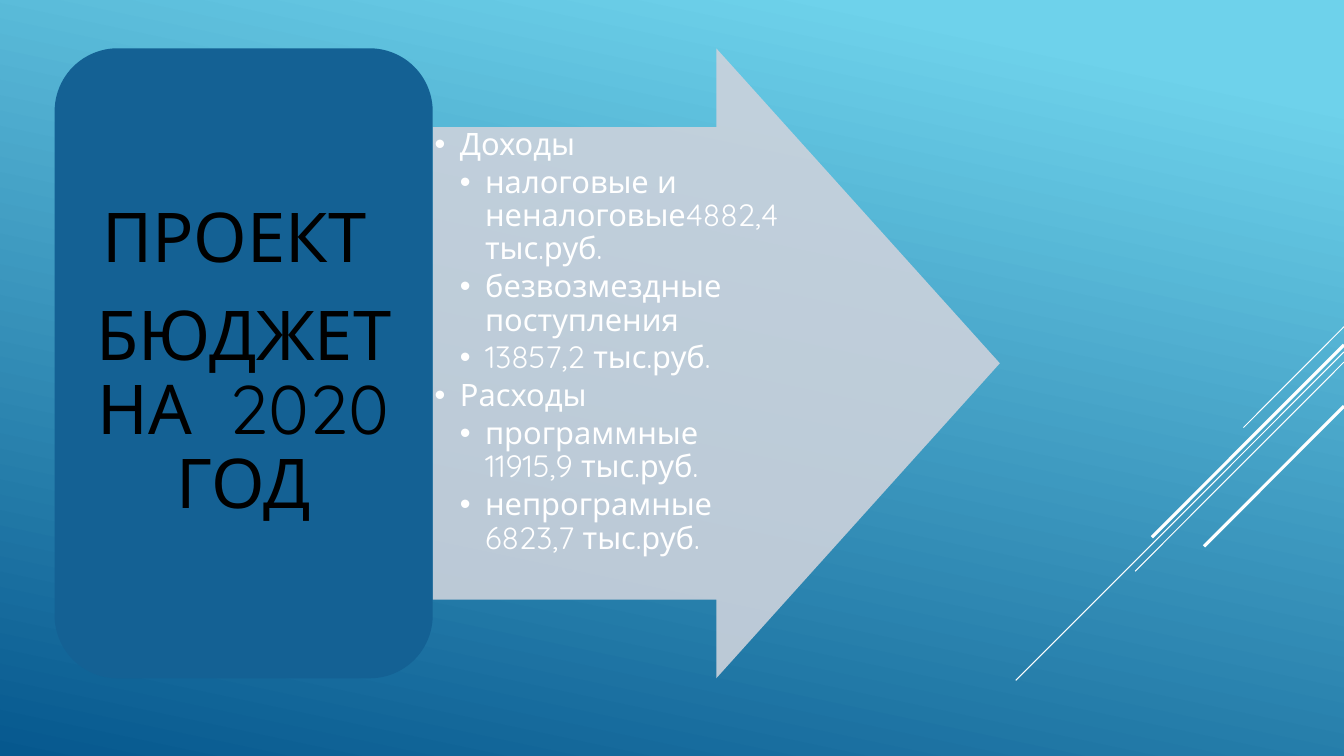
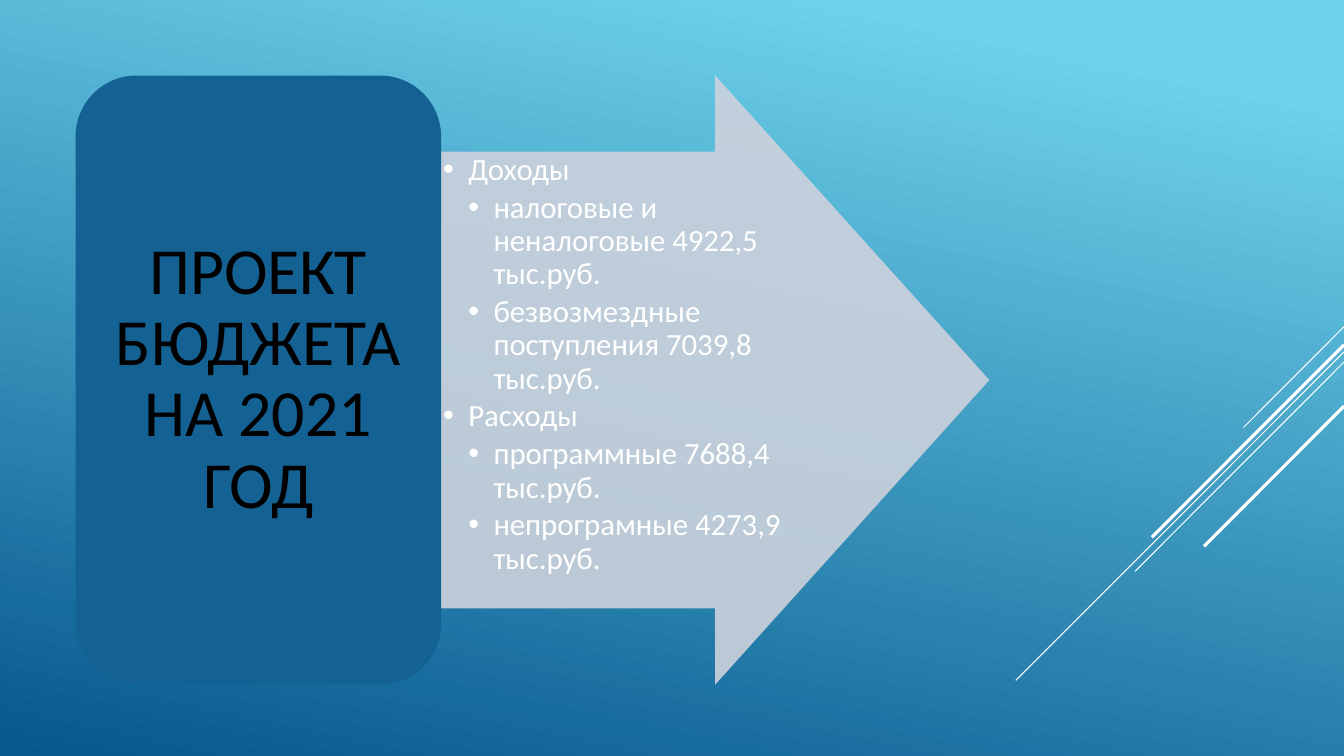
from lxml.etree import SubElement
from pptx import Presentation
from pptx.dml.color import RGBColor
from pptx.enum.shapes import MSO_CONNECTOR, MSO_SHAPE
from pptx.enum.text import MSO_ANCHOR, PP_ALIGN
from pptx.oxml.ns import qn
from pptx.util import Inches, Pt

COLORS = {
    "sky": "6ED2EB",
    "deep": "06588E",
    "panel": "146194",
    "arrow": "CCD2DC",
    "white": "FFFFFF",
    "black": "000000",
}
COLS, ROWS = 160, 90
SLIDE_W, SLIDE_H = Inches(13.33), Inches(7.5)
CELL = SLIDE_H / ROWS
PANEL_SHARE, ARROW_SHARE = 0.6, 0.9
SHAFT_SHARE, LIST_SHARE = 0.75, 0.625
BULLET_SIZE = 22
INDENT = Inches(0.25)
DIAGONALS = [
    (38.9, 12, 0.75),
    (41.9, 39.1, 0.75),
    (43.1, 24.9, 0.75),
    (41.05, 22.9, 2.25),
    (48.35, 16.7, 2.25),
]
BUDGETS = [
    {
        "left": 6.5, "top": 5.75, "height": 75,
        "font": "Quicksand", "title_size": 49,
        "title": ["ПРОЕКТ ", "БЮДЖЕТ НА  2020 ГОД"],
        "items": [
            ("Доходы", ["налоговые и неналоговые4882,4 тыс.руб.",
                        "безвозмездные поступления",
                        "13857,2 тыс.руб."]),
            ("Расходы", ["программные 11915,9 тыс.руб.",
                         "непрограмные 6823,7 тыс.руб."]),
        ],
    },
    {
        "left": 9, "top": 9, "height": 72.5,
        "font": "Calibri", "title_size": 47,
        "title": ["ПРОЕКТ БЮДЖЕТА НА 2021 ГОД"],
        "items": [
            ("Доходы", ["налоговые и неналоговые 4922,5 тыс.руб.",
                        "безвозмездные поступления 7039,8 тыс.руб."]),
            ("Расходы", ["программные 7688,4 тыс.руб.",
                         "непрограмные 4273,9 тыс.руб."]),
        ],
    },
]


def cells(n):
    return round(n * CELL)


def rgb(name):
    return RGBColor.from_string(COLORS[name])


def paint_background(s):
    fill = s.background.fill
    fill.gradient()
    fill.gradient_angle = 360 - 102
    for stop, position, color in zip(fill.gradient_stops, (0.1, 1), ("sky", "deep")):
        stop.position = position
        stop.color.rgb = rgb(color)


def add_diagonals(s):
    for row, span, width in DIAGONALS:
        line = s.shapes.add_connector(
            MSO_CONNECTOR.STRAIGHT, SLIDE_W, cells(row),
            cells(COLS - span), cells(row + span))
        line.line.color.rgb = rgb("white")
        line.line.width = Pt(width)
        SubElement(line._element.spPr, qn("a:effectLst"))


def add_block(s, kind, left, top, width, height, color):
    sp = s.shapes.add_shape(kind, cells(left), cells(top), cells(width), cells(height))
    sp.shadow.inherit = False
    sp.fill.solid()
    sp.fill.fore_color.rgb = rgb(color)
    sp.line.fill.background()
    return sp


def set_frame(tf, anchor, side, end):
    tf.word_wrap = True
    tf.vertical_anchor = anchor
    tf.margin_left = tf.margin_right = Inches(side)
    tf.margin_top = tf.margin_bottom = Inches(end)


def write_paragraphs(tf, lines, font, size, color, align, gap):
    tf.text = "\n".join(lines)
    for p in tf.paragraphs:
        p.alignment = align
        p.line_spacing = 0.9
        p.space_after = Pt(round(size * gap, 1))
        for r in p.runs:
            r.font.name = font
            r.font.size = Pt(size)
            r.font.color.rgb = rgb(color)


def add_bullet(p, level):
    p.level = level
    pPr = p._p.get_or_add_pPr()
    pPr.set("marL", str(INDENT * (level + 1)))
    pPr.set("indent", str(-INDENT))
    SubElement(pPr, qn("a:buFont"), typeface="Arial")
    SubElement(pPr, qn("a:buChar"), char="•")


def add_arrow(s, left, top, width, height):
    sp = add_block(s, MSO_SHAPE.RIGHT_ARROW, left, top, width, height, "arrow")
    sp.adjustments[0], sp.adjustments[1] = SHAFT_SHARE, 0.5
    SubElement(sp._element.spPr.find(".//" + qn("a:srgbClr")), qn("a:alpha"), val="90000")


def add_bullet_list(s, budget, left, top, width, height):
    tf = s.shapes.add_textbox(cells(left), cells(top), cells(width), cells(height)).text_frame
    set_frame(tf, MSO_ANCHOR.TOP, 0.02, 0.02)
    rows = []
    for heading, details in budget["items"]:
        rows += [(heading, 0)] + [(detail, 1) for detail in details]
    write_paragraphs(tf, [text for text, _ in rows], budget["font"], BULLET_SIZE,
                     "white", PP_ALIGN.LEFT, 0.15)
    for p, (_, level) in zip(tf.paragraphs, rows):
        add_bullet(p, level)


def add_panel(s, budget, width):
    sp = add_block(s, MSO_SHAPE.ROUNDED_RECTANGLE, budget["left"], budget["top"],
                   width, budget["height"], "panel")
    set_frame(sp.text_frame, MSO_ANCHOR.MIDDLE, 0.2, 0.1)
    write_paragraphs(sp.text_frame, budget["title"], budget["font"], budget["title_size"],
                     "black", PP_ALIGN.CENTER, 0.35)


def add_budget(s, budget):
    top, height = budget["top"], budget["height"]
    panel_w, arrow_w = height * PANEL_SHARE, height * ARROW_SHARE
    left = budget["left"] + panel_w
    add_arrow(s, left, top, arrow_w, height)
    add_bullet_list(s, budget, left, top + height * (1 - SHAFT_SHARE) / 2,
                    arrow_w * LIST_SHARE, height * SHAFT_SHARE)
    add_panel(s, budget, panel_w)


def main():
    prs = Presentation()
    prs.slide_width, prs.slide_height = SLIDE_W, SLIDE_H
    for budget in BUDGETS:
        s = prs.slides.add_slide(prs.slide_layouts[6])
        paint_background(s)
        add_diagonals(s)
        add_budget(s, budget)
    prs.save("out.pptx")


if __name__ == "__main__":
    main()
